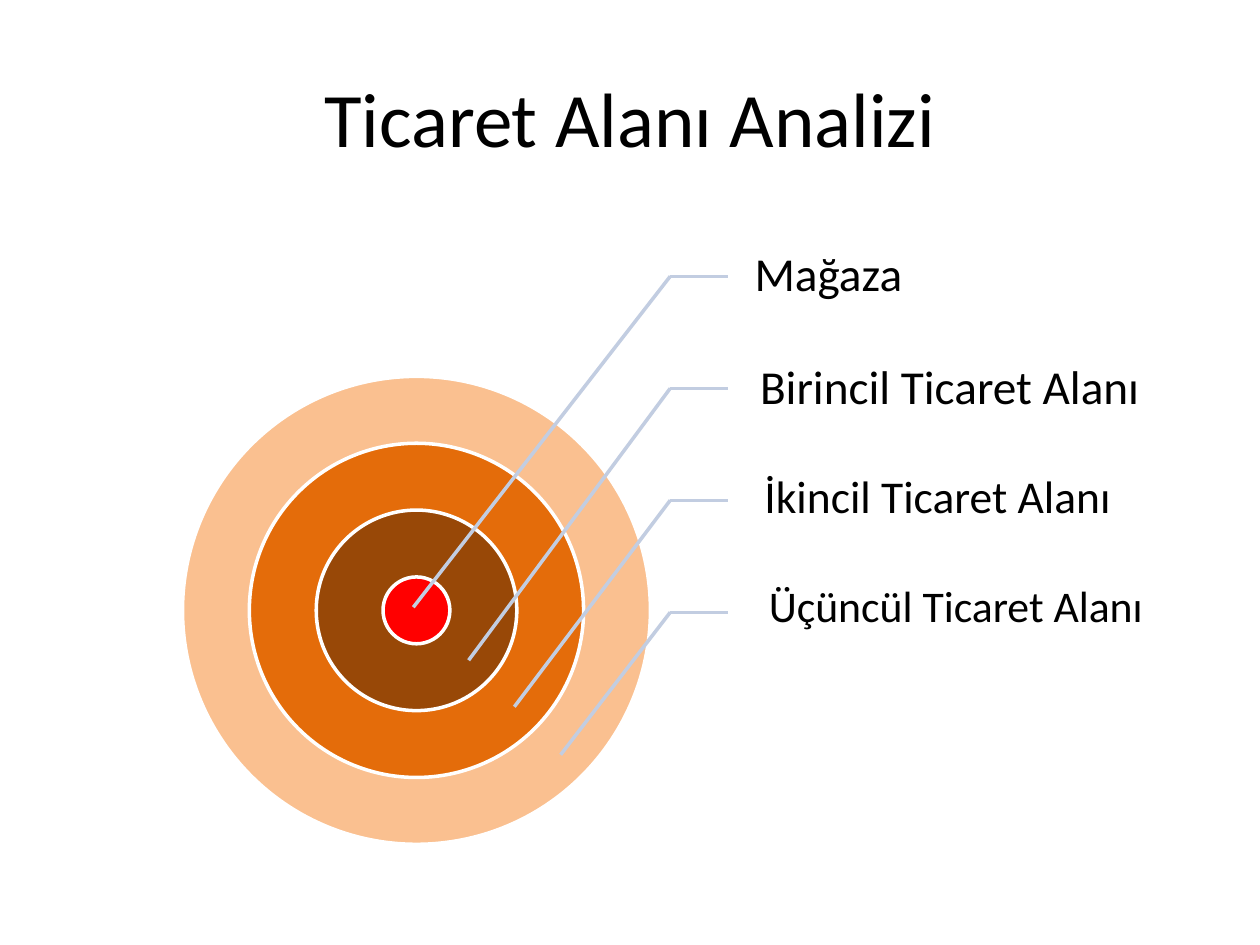
"""Build a slide of concentric trade areas with labelled leader lines."""
from dataclasses import dataclass

from lxml.etree import SubElement
from pptx import Presentation
from pptx.dml.color import RGBColor
from pptx.enum.shapes import MSO_CONNECTOR as Connector, MSO_SHAPE as Shape
from pptx.enum.text import MSO_ANCHOR as Anchor, PP_ALIGN as Align
from pptx.oxml.ns import qn
from pptx.slide import Slide
from pptx.util import Pt

BLACK = RGBColor(0x00, 0x00, 0x00)
WHITE = RGBColor(0xFF, 0xFF, 0xFF)
LEADER = RGBColor(0xC2, 0xCD, 0xE1)
RED = RGBColor(0xFF, 0x00, 0x00)
BROWN = RGBColor(0x98, 0x48, 0x07)
ORANGE = RGBColor(0xE4, 0x6C, 0x0A)
PEACH = RGBColor(0xFA, 0xC0, 0x90)

FONT = "Calibri"
LINE_WIDTH = 2
CENTER_X, CENTER_Y = 238, 348.8
CORE_DIAMETER = 38.2
ELBOW_X, LEADER_END_X = 383, 416.2
FIRST_LEADER_Y, LEADER_STEP = 157.9, 64
LABEL_HEIGHT, LABEL_SHIFT = 64, 3.1


@dataclass(frozen=True)
class TradeArea:
    """A ring, its label and the point its leader reaches."""
    name: str
    color: RGBColor
    size: float
    inset: float
    top: float
    width: float
    target: tuple[float, float]


AREAS = (
    TradeArea("Mağaza", RED, 27, 15, 126, 134, (236.2, 347)),
    TradeArea("Birincil Ticaret Alanı", BROWN, 27, 15, 190.6, 265, (267.8, 377.3)),
    TradeArea("İkincil Ticaret Alanı", ORANGE, 26, 14.4, 252.8, 243.4, (293.9, 403.9)),
    TradeArea("Üçüncül Ticaret Alanı", PEACH, 25, 13.9, 315.4, 252, (320.4, 431.3)),
)


def add_text(slide: Slide, text: str, *, left: float, top: float, width: float,
             height: float, size: float, align: Align = Align.LEFT,
             inset: float = 7.2, margin: float = 3, spacing: float = 1) -> None:
    """Add a vertically centred text box."""
    shape = slide.shapes.add_textbox(Pt(left), Pt(top), Pt(width), Pt(height))
    frame = shape.text_frame
    frame.word_wrap = True
    frame.vertical_anchor = Anchor.MIDDLE
    frame.margin_left = Pt(inset)
    frame.margin_right = frame.margin_top = frame.margin_bottom = Pt(margin)
    paragraph = frame.paragraphs[0]
    paragraph.alignment = align
    paragraph.line_spacing = spacing
    run = paragraph.add_run()
    run.text = text
    run.font.name = FONT
    run.font.size = Pt(size)
    run.font.color.rgb = BLACK


def add_ring(slide: Slide, area: TradeArea, index: int) -> None:
    """Add a filled circle around the common centre."""
    diameter = CORE_DIAMETER * (2 * index + 1)
    shape = slide.shapes.add_shape(
        Shape.OVAL, Pt(CENTER_X - diameter / 2), Pt(CENTER_Y - diameter / 2),
        Pt(diameter), Pt(diameter))
    shape.shadow.inherit = False
    shape.fill.solid()
    shape.fill.fore_color.rgb = area.color
    shape.line.color.rgb = WHITE
    shape.line.width = Pt(LINE_WIDTH)


def add_line(slide: Slide, start: tuple[float, float], end: tuple[float, float]) -> None:
    """Add a straight leader segment without shadow."""
    connector = slide.shapes.add_connector(
        Connector.STRAIGHT, Pt(start[0]), Pt(start[1]), Pt(end[0]), Pt(end[1]))
    connector.line.color.rgb = LEADER
    connector.line.width = Pt(LINE_WIDTH)
    SubElement(connector.element.spPr, qn("a:effectLst"))


def add_label(slide: Slide, area: TradeArea, index: int) -> None:
    """Add the name of a trade area with its bent leader."""
    add_text(slide, area.name, left=LEADER_END_X + LABEL_SHIFT * index, top=area.top,
             width=area.width, height=LABEL_HEIGHT, size=area.size,
             inset=area.inset, spacing=0.9)
    elbow = (ELBOW_X, FIRST_LEADER_Y + LEADER_STEP * index)
    add_line(slide, elbow, (LEADER_END_X, elbow[1]))
    add_line(slide, elbow, area.target)


def main() -> None:
    """Create and save the presentation."""
    presentation = Presentation()
    presentation.slide_width, presentation.slide_height = Pt(720), Pt(540)
    slide = presentation.slides.add_slide(presentation.slide_layouts[6])
    add_text(slide, "Ticaret Alanı Analizi", left=36, top=21.6, width=648, height=90,
             size=44, align=Align.CENTER, margin=7.2)
    for index, area in reversed(tuple(enumerate(AREAS))):
        add_ring(slide, area, index)
    for index, area in enumerate(AREAS):
        add_label(slide, area, index)
    presentation.save("out.pptx")


if __name__ == "__main__":
    main()
